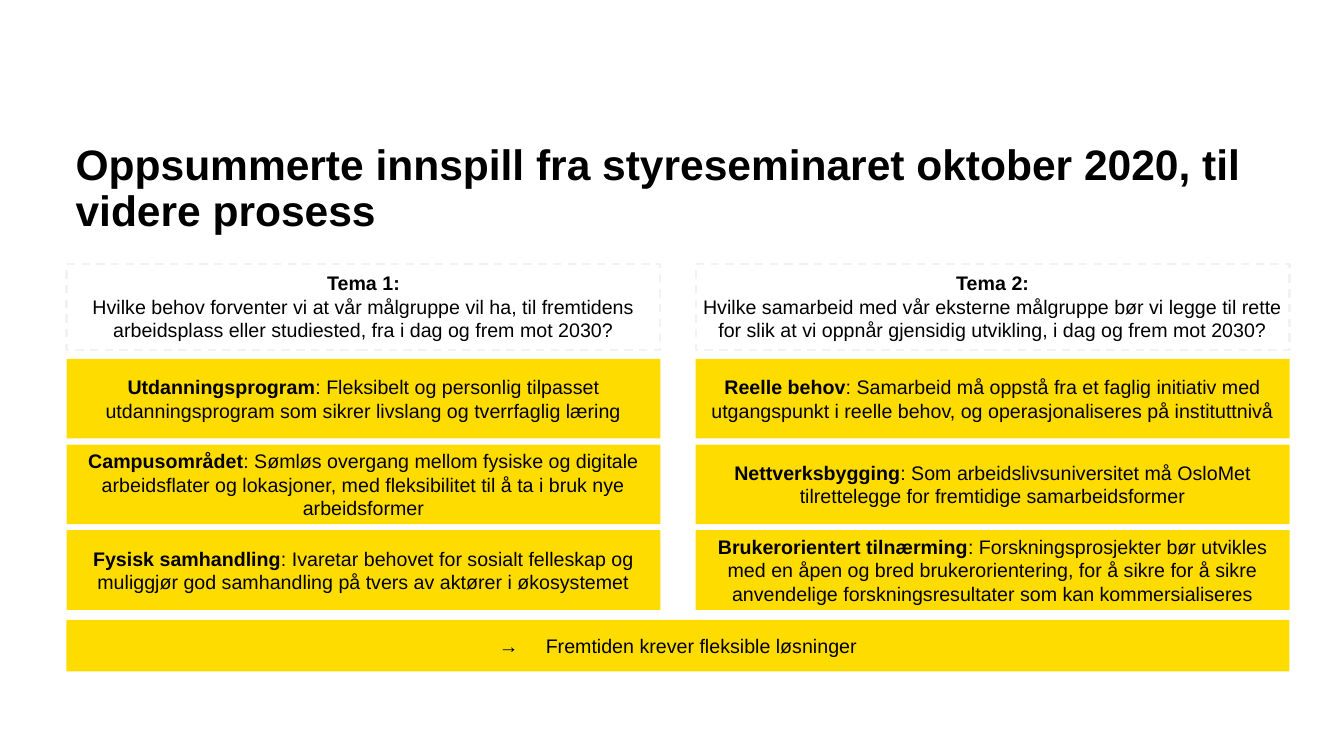
from dataclasses import dataclass
from pptx import Presentation
from pptx.dml.color import RGBColor
from pptx.enum.dml import MSO_LINE
from pptx.enum.shapes import MSO_SHAPE
from pptx.enum.text import MSO_ANCHOR, PP_ALIGN
from pptx.util import Inches, Pt


@dataclass(frozen=True)
class Theme:
    ink: RGBColor = RGBColor(0, 0, 0)
    gold: RGBColor = RGBColor(0xFF, 0xDC, 0x00)
    edge: RGBColor = RGBColor(0xF2, 0xF2, 0xF2)
    font: str = "Arial"
    head: float = 30.4
    body: float = 14


THEME = Theme()

# Layout grid, in inches
LEFT, WIDE, STEP = 0.66, 5.89, 6.24
TOP, HIGH, PITCH = 3.56, 0.79, 0.85
PAD = 0.07

TITLE = "Oppsummerte innspill fra styreseminaret oktober 2020, til videre prosess"
TOPICS = [
    ("Tema 1:",
     "Hvilke behov forventer vi at vår målgruppe vil ha, til fremtidens "
     "arbeidsplass eller studiested, fra i dag og frem mot 2030?",
     [("Utdanningsprogram",
       ": Fleksibelt og personlig tilpasset utdanningsprogram som sikrer "
       "livslang og tverrfaglig læring"),
      ("Campusområdet",
       ": Sømløs overgang mellom fysiske og digitale arbeidsflater og "
       "lokasjoner, med fleksibilitet til å ta i bruk nye arbeidsformer"),
      ("Fysisk samhandling",
       ": Ivaretar behovet for sosialt felleskap og muliggjør god "
       "samhandling på tvers av aktører i økosystemet")]),
    ("Tema 2:",
     "Hvilke samarbeid med vår eksterne målgruppe bør vi legge til rette "
     "for slik at vi oppnår gjensidig utvikling, i dag og frem mot 2030?",
     [("Reelle behov",
       ": Samarbeid må oppstå fra et faglig initiativ med utgangspunkt i "
       "reelle behov, og operasjonaliseres på instituttnivå"),
      ("Nettverksbygging",
       ": Som arbeidslivsuniversitet må OsloMet tilrettelegge for "
       "fremtidige samarbeidsformer"),
      ("Brukerorientert tilnærming",
       ": Forskningsprosjekter bør utvikles med en åpen og bred "
       "brukerorientering, for å sikre for å sikre anvendelige "
       "forskningsresultater som kan kommersialiseres")]),
]


def apply(item, form):
    for name, value in form.items():
        setattr(item, name, value)


def add_run(para, text, bold, size=THEME.body):
    run = para.add_run()
    run.text = text
    apply(run.font, {"name": THEME.font, "size": Pt(size), "bold": bold})
    run.font.color.rgb = THEME.ink
    return run


def set_frame(frame, pad, anchor):
    inset = Inches(pad)
    apply(frame, {"word_wrap": True, "vertical_anchor": anchor,
                  "margin_left": inset, "margin_right": inset,
                  "margin_top": inset, "margin_bottom": inset})


def add_title(slide):
    box = slide.shapes.add_textbox(Inches(0.75), Inches(1.83),
                                   Inches(11.82), Inches(0.51))
    set_frame(box.text_frame, 0, MSO_ANCHOR.BOTTOM)
    para = box.text_frame.paragraphs[0]
    para.line_spacing = 0.9
    add_run(para, TITLE, True, THEME.head)


def add_box(slide, x, y, width, height, anchor=MSO_ANCHOR.MIDDLE):
    box = slide.shapes.add_shape(MSO_SHAPE.RECTANGLE, Inches(x), Inches(y),
                                 Inches(width), Inches(height))
    box.shadow.inherit = False
    set_frame(box.text_frame, PAD, anchor)
    box.text_frame.paragraphs[0].alignment = PP_ALIGN.CENTER
    return box


def add_topic(slide, x, name, text):
    box = add_box(slide, x, 2.62, WIDE, 0.85, MSO_ANCHOR.TOP)
    box.fill.background()
    box.line.color.rgb = THEME.edge
    apply(box.line, {"width": Pt(1.5), "dash_style": MSO_LINE.DASH})
    add_run(box.text_frame.paragraphs[0], name, True)
    para = box.text_frame.add_paragraph()
    para.alignment = PP_ALIGN.CENTER
    add_run(para, text, False)


def add_card(slide, x, y, width, height, lead, text):
    box = add_box(slide, x, y, width, height)
    box.fill.solid()
    box.fill.fore_color.rgb = THEME.gold
    box.line.fill.background()
    para = box.text_frame.paragraphs[0]
    first = add_run(para, lead, True)
    add_run(para, text, False)
    return first


def main():
    deck = Presentation()
    apply(deck, {"slide_width": Inches(13.33), "slide_height": Inches(7.5)})
    slide = deck.slides.add_slide(deck.slide_layouts[6])
    add_title(slide)

    # One column per topic
    for col, (name, text, cards) in enumerate(TOPICS):
        x = LEFT + col * STEP
        add_topic(slide, x, name, text)
        for row, (lead, rest) in enumerate(cards):
            add_card(slide, x, TOP + row * PITCH, WIDE, HIGH, lead, rest)

    # Conclusion bar, with letter spacing to set the arrow apart
    arrow = add_card(slide, LEFT, 6.15, STEP + WIDE, 0.51,
                     "→ ", "Fremtiden krever fleksible løsninger")
    arrow.font._element.set("spc", "780")

    deck.save("out.pptx")


if __name__ == "__main__":
    main()
